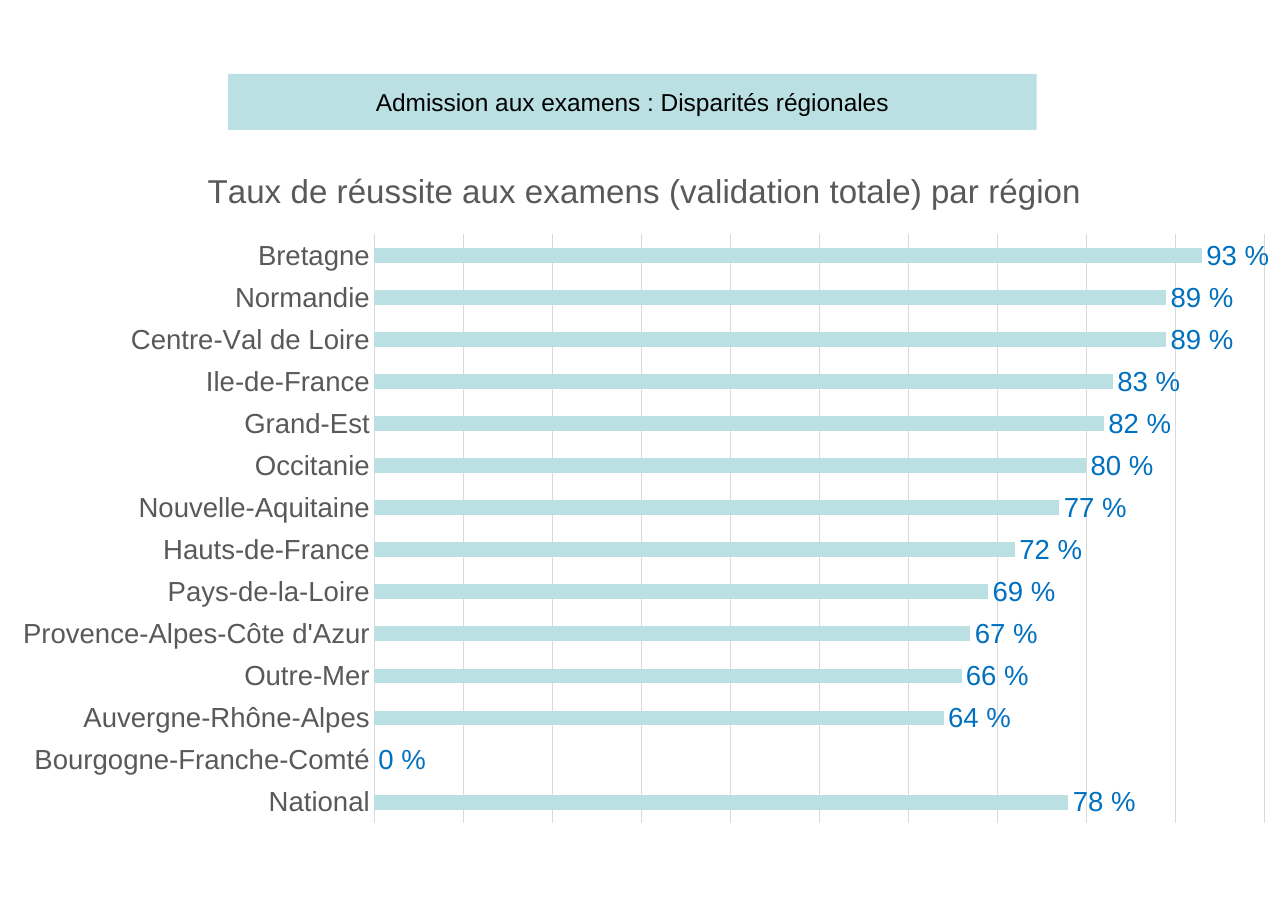
from pptx import Presentation
from pptx.chart.data import CategoryChartData
from pptx.dml.color import RGBColor
from pptx.enum.chart import XL_CHART_TYPE, XL_LABEL_POSITION, XL_TICK_MARK
from pptx.enum.shapes import MSO_SHAPE
from pptx.enum.text import MSO_ANCHOR, PP_ALIGN
from pptx.oxml import parse_xml
from pptx.oxml.ns import nsdecls
from pptx.util import Inches, Pt

AQUA, GREY, GRID, BLUE, BLACK = "BBE0E3", "595959", "D9D9D9", "0070C0", "000000"
PERCENT = r"##0\ %"
RATES = {
    "Bretagne": 0.93,
    "Normandie": 0.89,
    "Centre-Val de Loire": 0.89,
    "Ile-de-France": 0.83,
    "Grand-Est": 0.82,
    "Occitanie": 0.80,
    "Nouvelle-Aquitaine": 0.77,
    "Hauts-de-France": 0.72,
    "Pays-de-la-Loire": 0.69,
    "Provence-Alpes-Côte d'Azur": 0.67,
    "Outre-Mer": 0.66,
    "Auvergne-Rhône-Alpes": 0.64,
    "Bourgogne-Franche-Comté": 0,
    "National": 0.78,
}


def color(hex_value):
    return RGBColor.from_string(hex_value)


def set_font(font, size, hex_value):
    font.name = "Arial"
    font.size = Pt(size)
    font.bold = False
    font.color.rgb = color(hex_value)


presentation = Presentation()
presentation.slide_width = Inches(11.69)
presentation.slide_height = Inches(8.27)
slide = presentation.slides.add_slide(presentation.slide_layouts[6])

# Heading band
band = slide.shapes.add_shape(
    MSO_SHAPE.RECTANGLE, Inches(2.07), Inches(0.67), Inches(7.34), Inches(0.51))
band.shadow.inherit = False
band.fill.solid()
band.fill.fore_color.rgb = color(AQUA)
band.line.fill.background()
band.text_frame.word_wrap = False
band.text_frame.vertical_anchor = MSO_ANCHOR.MIDDLE
paragraph = band.text_frame.paragraphs[0]
paragraph.text = "Admission aux examens : Disparités régionales"
paragraph.alignment = PP_ALIGN.CENTER
set_font(paragraph.font, 16, BLACK)

# Bar chart
chart_data = CategoryChartData(number_format=PERCENT)
chart_data.categories = list(RATES)
chart_data.add_series("Taux de réussite", list(RATES.values()))
chart = slide.shapes.add_chart(
    XL_CHART_TYPE.BAR_CLUSTERED, 0, Inches(1.31), Inches(11.71), Inches(6.29),
    chart_data).chart
set_font(chart.font, 18, BLACK)
chart.has_legend = False

# Chart title
chart.has_title = True
chart.chart_title.include_in_layout = False
title = chart.chart_title.text_frame.paragraphs[0]
title.text = "Taux de réussite aux examens (validation totale) par région"
set_font(title.font, 21.6, GREY)

# Axes
regions = chart.category_axis
regions.reverse_order = True
regions.major_tick_mark = XL_TICK_MARK.NONE
regions.format.line.color.rgb = color(GRID)
regions.format.line.width = Pt(0.75)
set_font(regions.tick_labels.font, 18, GREY)

rates = chart.value_axis
rates.minimum_scale, rates.maximum_scale, rates.major_unit = 0, 1, 0.1
rates.visible = False
rates.has_major_gridlines = True
rates.major_gridlines.format.line.color.rgb = color(GRID)
rates.major_gridlines.format.line.width = Pt(0.75)

# Bars and value labels
plot = chart.plots[0]
plot.gap_width = 182
plot.vary_by_categories = False
bars = plot.series[0]
bars.format.fill.solid()
bars.format.fill.fore_color.rgb = color(AQUA)
labels = bars.data_labels
labels.show_value = True
labels.number_format = PERCENT
labels.number_format_is_linked = False
labels.position = XL_LABEL_POSITION.OUTSIDE_END
set_font(labels.font, 18, BLUE)

# Plot area as shares of the chart
plot_area = chart._chartSpace.chart.plotArea
for layout in plot_area.xpath("c:layout"):
    plot_area.remove(layout)
plot_area.insert(0, parse_xml(
    f'<c:layout {nsdecls("c")}><c:manualLayout><c:layoutTarget val="inner"/>'
    '<c:xMode val="edge"/><c:yMode val="edge"/><c:x val="0.29"/><c:y val="0.13"/>'
    '<c:w val="0.69"/><c:h val="0.85"/></c:manualLayout></c:layout>'))

presentation.save("out.pptx")
